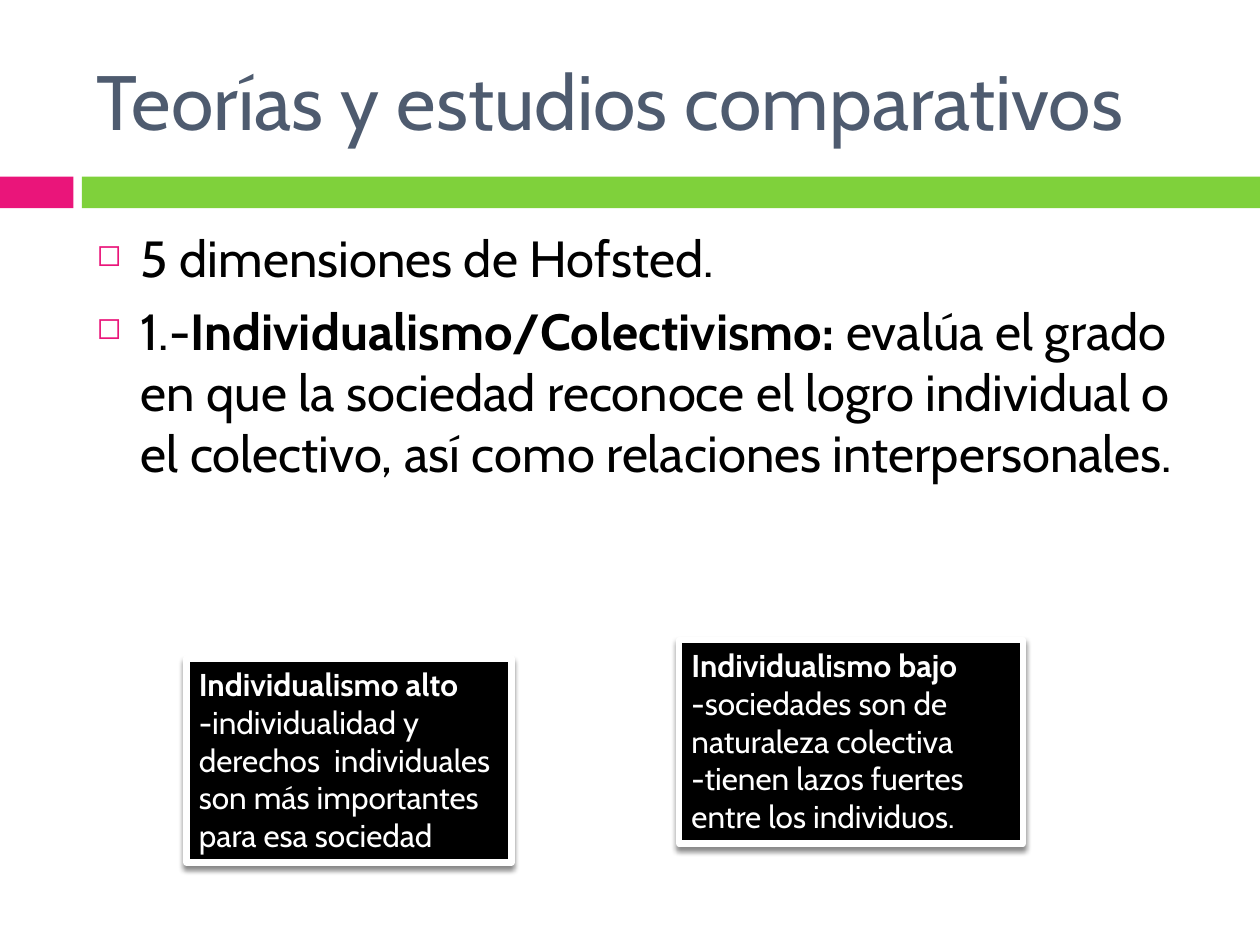
from dataclasses import dataclass

from lxml import etree
from pptx import Presentation
from pptx.dml.color import RGBColor
from pptx.enum.shapes import MSO_SHAPE
from pptx.enum.text import MSO_ANCHOR, MSO_AUTO_SIZE, PP_ALIGN
from pptx.oxml.ns import qn
from pptx.util import Cm, Pt

RECTANGLE = MSO_SHAPE.RECTANGLE
MIDDLE, TOP = MSO_ANCHOR.MIDDLE, MSO_ANCHOR.TOP
LEFT = PP_ALIGN.LEFT
FIT_SHAPE = MSO_AUTO_SIZE.SHAPE_TO_FIT_TEXT


@dataclass(frozen=True)
class Theme:
    font: str = "Cabin"
    title: str = "4E5B6F"
    pink: str = "EA157A"
    green: str = "7FD13B"
    black: str = "000000"
    white: str = "FFFFFF"
    title_size: int = 44
    body_size: int = 29
    card_size: int = 18


THEME = Theme()


def write_text(shape, paragraphs, *, size, color, anchor=TOP, before=0, bullet=None):
    """Fill a shape; each paragraph is a list of (text, bold) spans."""
    frame = shape.text_frame
    frame.word_wrap = True
    frame.vertical_anchor = anchor
    for index, spans in enumerate(paragraphs):
        para = frame.add_paragraph() if index else frame.paragraphs[0]
        para.alignment = LEFT
        para.space_before = Pt(before)
        if bullet:
            add_bullet(para, bullet)
        for text, bold in spans:
            span = para.add_run()
            span.text = text
            span.font.name = THEME.font
            span.font.size = Pt(size)
            span.font.bold = bold
            span.font.color.rgb = RGBColor.from_string(color)


def add_bullet(para, symbol):
    properties = para._p.get_or_add_pPr()
    indent = Cm(0.89)
    properties.set("marL", str(indent))
    properties.set("indent", str(-indent))
    bullet_color = etree.SubElement(properties, qn("a:buClr"))
    etree.SubElement(bullet_color, qn("a:srgbClr"), val=THEME.pink)
    etree.SubElement(properties, qn("a:buSzPct"), val="60000")
    etree.SubElement(properties, qn("a:buChar"), char=symbol)


def add_text_box(page, left, top, width, height, paragraphs, **text_format):
    box = page.shapes.add_textbox(Cm(left), Cm(top), Cm(width), Cm(height))
    write_text(box, paragraphs, **text_format)


def add_rectangle(page, left, top, width, height, color):
    shape = page.shapes.add_shape(RECTANGLE, Cm(left), Cm(top), Cm(width), Cm(height))
    shape.shadow.inherit = False
    shape.fill.solid()
    shape.fill.fore_color.rgb = RGBColor.from_string(color)
    shape.line.fill.background()
    return shape


def add_shadow(shape):
    """Cast a soft shadow straight down."""
    effects = shape._element.spPr.find(qn("a:effectLst"))
    shadow = etree.SubElement(
        effects, qn("a:outerShdw"), blurRad=str(Pt(3)), dist=str(Pt(2.4)),
        dir="5400000", rotWithShape="0")
    color = etree.SubElement(shadow, qn("a:srgbClr"), val=THEME.black)
    etree.SubElement(color, qn("a:alpha"), val="45000")


def add_card(page, left, top, width, heading, lines):
    card = add_rectangle(page, left, top, width, 4.11, THEME.black)
    card.line.color.rgb = RGBColor.from_string(THEME.white)
    card.line.width = Pt(3.75)
    add_shadow(card)
    paragraphs = [[(heading, True)]] + [[(line, False)] for line in lines]
    write_text(card, paragraphs, size=THEME.card_size, color=THEME.white)
    card.text_frame.auto_size = FIT_SHAPE


def main():
    deck = Presentation()
    deck.slide_width, deck.slide_height = Cm(25.4), Cm(19.05)
    page = deck.slides.add_slide(deck.slide_layouts[6])

    add_rectangle(page, 0, 3.56, 1.48, 0.64, THEME.pink)
    add_rectangle(page, 1.65, 3.56, 23.75, 0.64, THEME.green)
    add_text_box(page, 1.7, 0.64, 22.66, 2.74,
                 [[("Teorías y estudios comparativos", False)]],
                 size=THEME.title_size, color=THEME.title, anchor=MIDDLE)
    add_text_box(page, 1.7, 4.45, 22.66, 12.5, [
        [("5 dimensiones de Hofsted.", False)],
        [("1.-", False),
         ("Individualismo/Colectivismo: ", True),
         ("evalúa el grado en que la sociedad reconoce el logro individual o "
          "el colectivo, así como relaciones interpersonales.", False)],
    ], size=THEME.body_size, color=THEME.black, before=7, bullet="◻")

    add_card(page, 3.76, 13.28, 6.55, "Individualismo alto", [
        "-individualidad y derechos  individuales son más importantes para esa sociedad"])
    add_card(page, 13.69, 12.9, 6.93, "Individualismo bajo", [
        "-sociedades son de naturaleza colectiva",
        "-tienen lazos fuertes entre los individuos."])

    deck.save("out.pptx")


if __name__ == "__main__":
    main()
